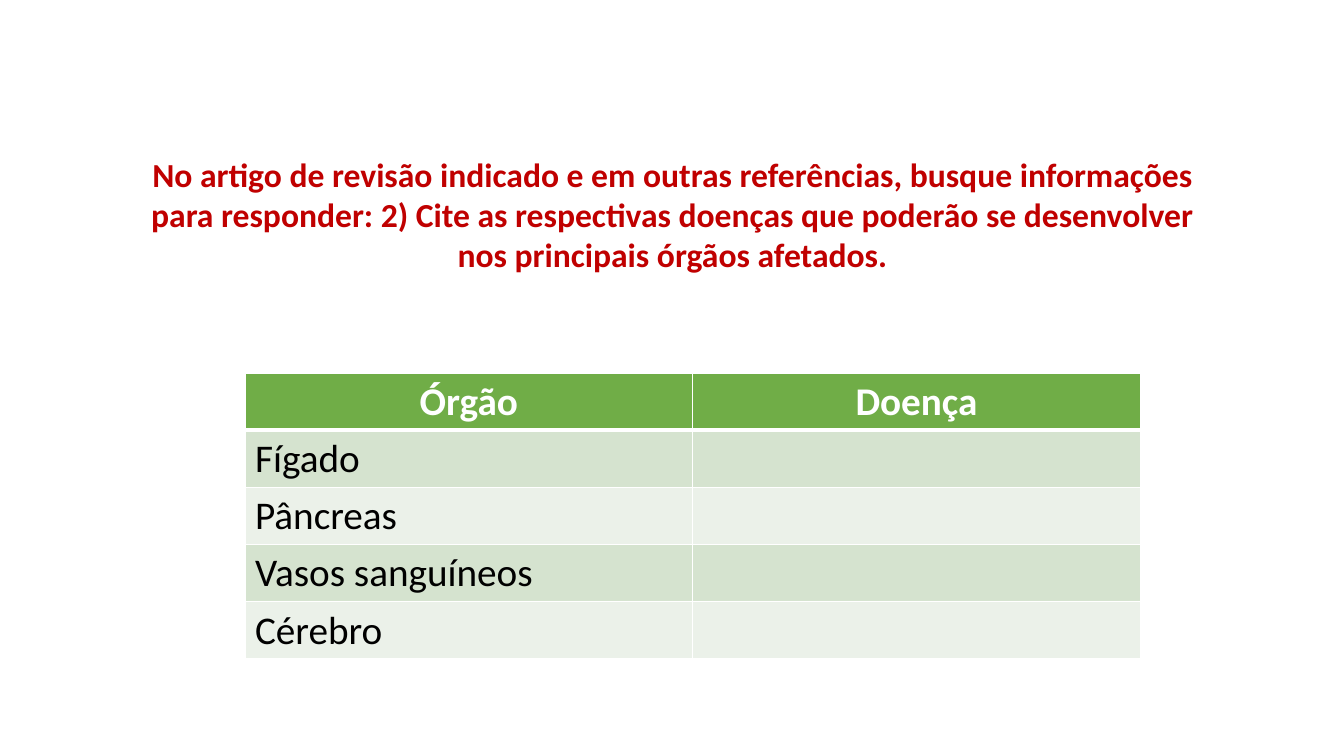
from dataclasses import dataclass

from lxml.etree import SubElement
from pptx import Presentation
from pptx.dml.color import RGBColor
from pptx.enum.text import MSO_ANCHOR, MSO_AUTO_SIZE, PP_ALIGN
from pptx.oxml.ns import qn
from pptx.util import Inches, Pt


@dataclass(frozen=True)
class Theme:
    font: str = "Calibri"
    title_size: int = 24
    table_size: int = 28
    title: str = "C00000"
    header: str = "70AD47"
    bands: tuple = ("D5E3CF", "EBF1E9")
    light: str = "FFFFFF"
    dark: str = "000000"


theme = Theme()


def write_text(text_frame, text, size, color, bold=False, align=PP_ALIGN.LEFT):
    paragraph = text_frame.paragraphs[0]
    paragraph.alignment = align
    run = paragraph.add_run()
    run.text = text
    run.font.name = theme.font
    run.font.size = Pt(size)
    run.font.bold = bold
    run.font.color.rgb = RGBColor.from_string(color)


def draw_borders(cell, widths):
    properties = cell._tc.get_or_add_tcPr()
    for side, width in widths.items():
        line = SubElement(properties, qn(f"a:ln{side}"), w=str(Pt(width)))
        fill = SubElement(line, qn("a:solidFill"))
        SubElement(fill, qn("a:srgbClr"), val=theme.light)


presentation = Presentation()
presentation.slide_width = Inches(13.33)
presentation.slide_height = Inches(7.5)
slide = presentation.slides.add_slide(presentation.slide_layouts[5])

title = slide.shapes.title
title.left, title.top = Inches(1.35), Inches(1.47)
title.width, title.height = Inches(10.64), Inches(1.31)
title.text_frame.word_wrap = True
title.text_frame.auto_size = MSO_AUTO_SIZE.SHAPE_TO_FIT_TEXT
title.text_frame.vertical_anchor = MSO_ANCHOR.MIDDLE
write_text(
    title.text_frame,
    "No artigo de revisão indicado e em outras referências, busque informações "
    "para responder: 2) Cite as respectivas doenças que poderão se desenvolver "
    "nos principais órgãos afetados.",
    size=theme.title_size,
    color=theme.title,
    bold=True,
    align=PP_ALIGN.CENTER,
)

rows = [
    ("Órgão", "Doença"),
    ("Fígado", ""),
    ("Pâncreas", ""),
    ("Vasos sanguíneos", ""),
    ("Cérebro", ""),
]
table = slide.shapes.add_table(
    len(rows), 2, Inches(2.43), Inches(3.7), Inches(8.88), Inches(2.8)
).table

for row_index, row in enumerate(rows):
    is_header = row_index == 0
    for column_index, text in enumerate(row):
        cell = table.cell(row_index, column_index)
        draw_borders(cell, {
            "L": 1,
            "R": 1,
            "T": 3 if row_index == 1 else 1,
            "B": 3 if is_header else 1,
        })
        cell.fill.solid()
        cell.fill.fore_color.rgb = RGBColor.from_string(
            theme.header if is_header else theme.bands[(row_index - 1) % 2]
        )
        if text:
            write_text(
                cell.text_frame,
                text,
                size=theme.table_size,
                color=theme.light if is_header else theme.dark,
                bold=is_header,
                align=PP_ALIGN.CENTER if is_header else PP_ALIGN.LEFT,
            )

presentation.save("out.pptx")
